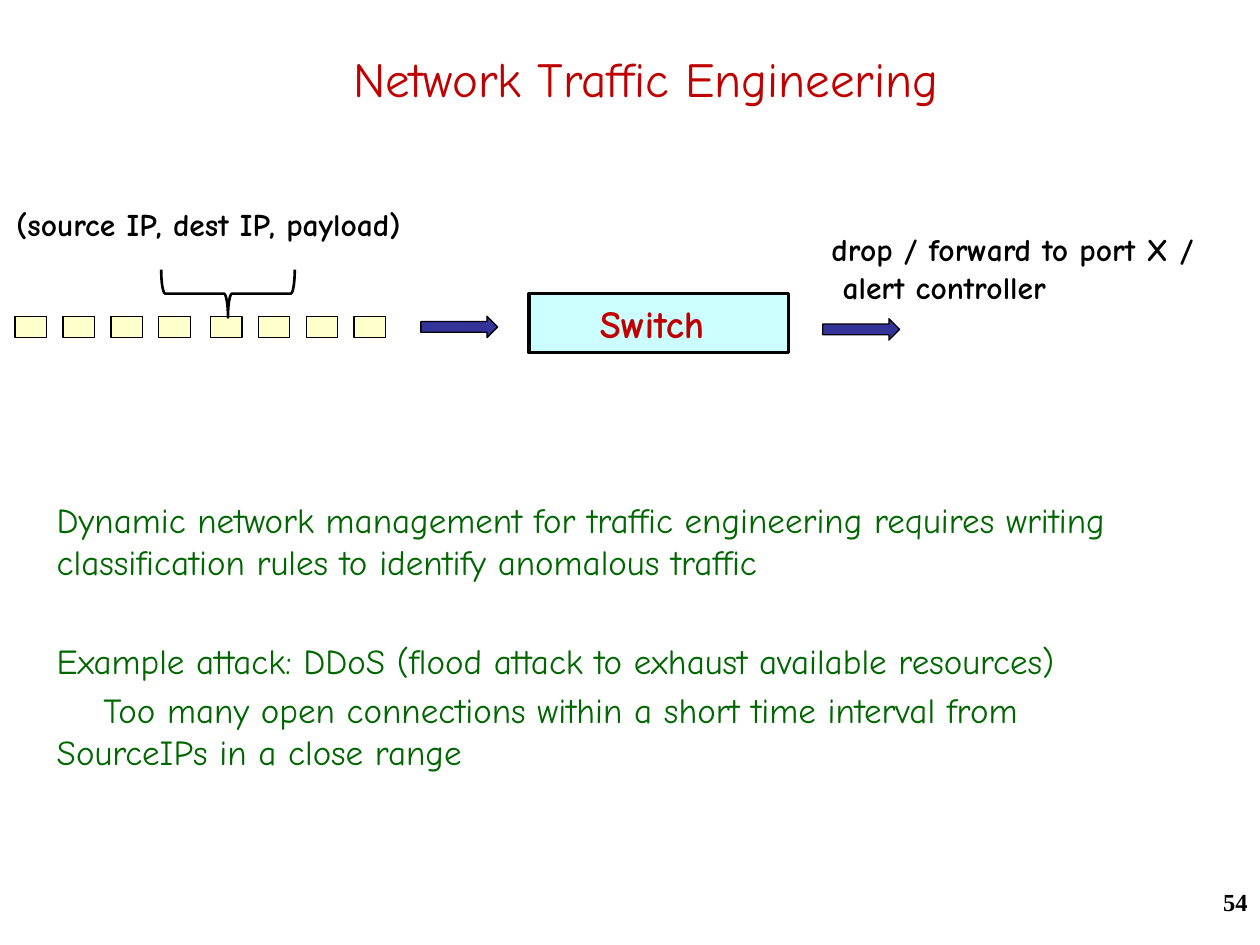
"""Build the network traffic engineering slide."""
from dataclasses import dataclass

from pptx import Presentation
from pptx.dml.color import RGBColor
from pptx.enum.shapes import MSO_SHAPE
from pptx.enum.text import MSO_ANCHOR, MSO_AUTO_SIZE, PP_ALIGN
from pptx.oxml.ns import qn
from pptx.util import Inches, Pt


@dataclass(frozen=True)
class Theme:
    font: str = "Comic Neue"
    serif: str = "Times New Roman"
    red: str = "C00000"
    green: str = "006600"
    black: str = "000000"
    cyan: str = "CCFFFF"
    cream: str = "FFFFCC"
    navy: str = "333399"
    title: int = 28
    switch: int = 22
    body: int = 20
    label: int = 18
    page: int = 14


theme = Theme()
deck = Presentation()
deck.slide_width, deck.slide_height = Inches(10), Inches(7.5)
col, row = deck.slide_width / 100, deck.slide_height / 75
slide = deck.slides.add_slide(deck.slide_layouts[1])


def grid(left, top, width, height):
    return int(left * col), int(top * row), int(width * col), int(height * row)


def write(shape, *lines, size=theme.label, color=theme.black, font=theme.font,
          bold=False, align=PP_ALIGN.LEFT, anchor=MSO_ANCHOR.TOP, gaps=()):
    frame = shape.text_frame
    frame.word_wrap = True
    frame.auto_size = MSO_AUTO_SIZE.NONE
    frame.vertical_anchor = anchor
    frame.text = "\n".join(lines)
    for para in frame.paragraphs:
        para.alignment = align
        for run in para.runs:
            run.font.name, run.font.size, run.font.bold = font, Pt(size), bold
            run.font.color.rgb = RGBColor.from_string(color)
    for para, gap in zip(frame.paragraphs, gaps):
        para.space_before = Pt(gap)


title = slide.shapes.title
title.left, title.top, title.width, title.height = grid(2.5, 3.3, 97.5, 5.8)
write(title, "Network Traffic Engineering", size=theme.title, color=theme.red,
      align=PP_ALIGN.CENTER, anchor=MSO_ANCHOR.MIDDLE)

body = slide.placeholders[1]
body.left, body.top, body.width, body.height = grid(3.5, 39.1, 92.4, 27.6)
write(body,
      "Dynamic network management for traffic engineering requires writing "
      "classification rules to identify anomalous traffic",
      "Example attack: DDoS (flood attack to exhaust available resources)",
      "Too many open connections within a short time interval from "
      "\vSourceIPs in a close range",
      size=theme.body, color=theme.green, gaps=(4, 32, 4))
for para, indent in zip(body.text_frame.paragraphs, (0, 0, 3.7)):
    props = para._p.get_or_add_pPr()
    props.set("marL", "0")
    props.set("indent", str(int(indent * col)))
    props.append(props.makeelement(qn("a:buNone"), {}))

packets = [(1.2 + 15.5 * group + 3.8 * step, 25.1, 2.5, 1.7)
           for group in range(2) for step in range(4)]
parts = [(MSO_SHAPE.RECTANGLE, (42, 23.3, 20.6, 4.7), theme.cyan, 2)]
parts += [(MSO_SHAPE.RECTANGLE, place, theme.cream, 0.75) for place in packets]
parts += [(MSO_SHAPE.RIGHT_ARROW, place, theme.navy, 0.75)
          for place in ((33.4, 25.1, 6.1, 1.7), (65.3, 25.3, 6.1, 1.7))]
parts += [(MSO_SHAPE.LEFT_BRACE, (16.2, 18, 3.8, 10.6), None, 1.5)]
shapes = []
for kind, place, fill, width in parts:
    shape = slide.shapes.add_shape(kind, *grid(*place))
    shape.shadow.inherit = False
    if fill:
        shape.fill.solid()
        shape.fill.fore_color.rgb = RGBColor.from_string(fill)
    else:
        shape.fill.background()
    shape.line.color.rgb = RGBColor.from_string(theme.black)
    shape.line.width = Pt(width)
    shapes.append(shape)
switch, brace = shapes[0], shapes[-1]
brace.rotation = 270
write(switch, "Switch ", size=theme.switch, color=theme.red, bold=True,
      align=PP_ALIGN.CENTER, anchor=MSO_ANCHOR.MIDDLE)

labels = [
    ((0.3, 15.8, 35.5, 4), ("(source IP, dest IP, payload)",), {}),
    ((65, 17.8, 33.5, 7.1), ("drop / forward to port X /", " alert controller"), {}),
    ((79.2, 69.9, 20.8, 5), ("54",),
     {"size": theme.page, "font": theme.serif, "align": PP_ALIGN.RIGHT}),
]
for place, lines, style in labels:
    write(slide.shapes.add_textbox(*grid(*place)), *lines, bold=True, **style)

deck.save("out.pptx")
